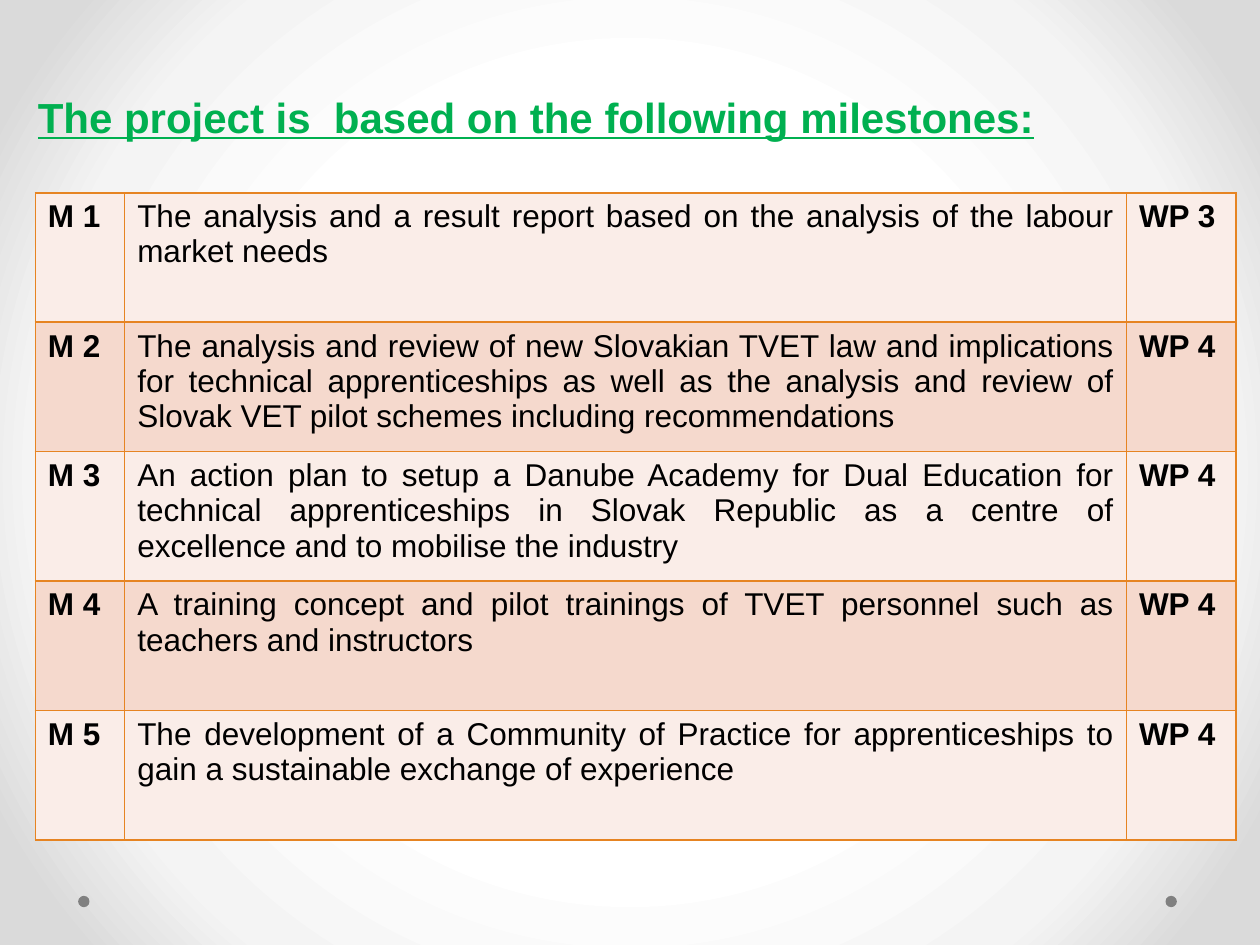
from lxml.etree import SubElement
from pptx import Presentation
from pptx.dml.color import RGBColor
from pptx.enum.shapes import MSO_SHAPE
from pptx.enum.text import MSO_ANCHOR, MSO_AUTO_SIZE, PP_ALIGN
from pptx.oxml import parse_xml
from pptx.oxml.ns import nsdecls, qn
from pptx.util import Inches, Pt

COLORS = {
    "title": "00B050",
    "text": "000000",
    "border": "E68422",
    "light": "FAEDE8",
    "dark": "F5D9CD",
    "dot": "808080",
}
BACKGROUND_STOPS = [(50, "FFFFFF"), (76, "F4F4F4"), (92, "DADADA")]
COLUMN_SHARES = [0.071, 0.795, 0.087]
ROW_SHARE = 0.137
MILESTONES = [
    ("M 1", "The analysis and a result report based on the analysis of the labour "
            "market needs", "WP 3"),
    ("M 2", "The analysis and review of new Slovakian TVET law and implications for "
            "technical apprenticeships as well as the analysis and review of Slovak "
            "VET pilot schemes including recommendations", "WP 4"),
    ("M 3", "An action plan to setup a Danube Academy for Dual Education for technical "
            "apprenticeships in Slovak Republic as a centre of excellence and to "
            "mobilise the industry", "WP 4"),
    ("M 4", "A training concept and pilot trainings of TVET personnel such as teachers "
            "and instructors", "WP 4"),
    ("M 5", "The development of a Community of Practice for apprenticeships to gain a "
            "sustainable exchange of experience", "WP 4"),
]


class SlideBuilder:
    font_name = "Arial"

    def __init__(self, presentation):
        self.width = presentation.slide_width
        self.height = presentation.slide_height
        self.slide = presentation.slides.add_slide(presentation.slide_layouts[5])

    def across(self, share):
        return round(self.width * share)

    def down(self, share):
        return round(self.height * share)

    def color(self, name):
        return RGBColor.from_string(COLORS[name])

    def add_text(self, paragraph, text, size, color, bold=False, underline=False):
        run = paragraph.add_run()
        run.text = text
        run.font.name = self.font_name
        run.font.size = Pt(size)
        run.font.bold = bold
        run.font.underline = underline
        run.font.color.rgb = self.color(color)

    def background(self, stops):
        stop_list = "".join(
            f'<a:gs pos="{position * 1000}"><a:srgbClr val="{color}"/></a:gs>'
            for position, color in stops
        )
        background = parse_xml(
            f'<p:bg {nsdecls("p", "a")}><p:bgPr><a:gradFill rotWithShape="1">'
            f'<a:gsLst>{stop_list}</a:gsLst><a:path path="circle">'
            '<a:fillToRect l="50000" t="50000" r="50000" b="50000"/></a:path>'
            '</a:gradFill><a:effectLst/></p:bgPr></p:bg>'
        )
        self.slide.element.cSld.insert(0, background)

    def dot(self, left, top):
        shape = self.slide.shapes.add_shape(
            MSO_SHAPE.OVAL, self.across(left), self.down(top),
            self.across(0.009), self.across(0.009),
        )
        shape.shadow.inherit = False
        shape.fill.solid()
        shape.fill.fore_color.rgb = self.color("dot")
        shape.line.fill.background()

    def title(self, text, left, top, width, height):
        shape = self.slide.shapes.title
        shape.left, shape.top = self.across(left), self.down(top)
        shape.width, shape.height = self.across(width), self.down(height)
        frame = shape.text_frame
        frame.word_wrap = True
        frame.auto_size = MSO_AUTO_SIZE.SHAPE_TO_FIT_TEXT
        frame.vertical_anchor = MSO_ANCHOR.TOP
        paragraph = frame.paragraphs[0]
        paragraph.alignment = PP_ALIGN.LEFT
        self.add_text(paragraph, text, 24, "title", bold=True, underline=True)

    def borders(self, cell):
        properties = cell._tc.get_or_add_tcPr()
        for index, side in enumerate(("lnL", "lnR", "lnT", "lnB")):
            line = SubElement(properties, qn(f"a:{side}"), w=str(Pt(1)))
            fill = SubElement(line, qn("a:solidFill"))
            SubElement(fill, qn("a:srgbClr"), val=COLORS["border"])
            properties.insert(index, line)

    def table(self, rows, left, top):
        table = self.slide.shapes.add_table(
            len(rows), len(COLUMN_SHARES), self.across(left), self.down(top),
            self.across(sum(COLUMN_SHARES)), self.down(ROW_SHARE * len(rows)),
        ).table
        for column, share in zip(table.columns, COLUMN_SHARES):
            column.width = self.across(share)
        for row_index, values in enumerate(rows):
            table.rows[row_index].height = self.down(ROW_SHARE)
            for column_index, text in enumerate(values):
                cell = table.cell(row_index, column_index)
                cell.fill.solid()
                cell.fill.fore_color.rgb = self.color("dark" if row_index % 2 else "light")
                self.borders(cell)
                description = column_index == 1
                paragraph = cell.text_frame.paragraphs[0]
                paragraph.alignment = PP_ALIGN.JUSTIFY if description else PP_ALIGN.LEFT
                self.add_text(paragraph, text, 18, "text", bold=not description)


def main():
    presentation = Presentation()
    presentation.slide_width = Inches(10)
    presentation.slide_height = Inches(7.5)
    builder = SlideBuilder(presentation)
    builder.background(BACKGROUND_STOPS)
    for left in (0.925, 0.062):
        builder.dot(left, 0.948)
    builder.title("The project is  based on the following milestones:",
                  0.02, 0.09, 0.961, 0.067)
    builder.table(MILESTONES, 0.028, 0.204)
    presentation.save("out.pptx")


if __name__ == "__main__":
    main()
